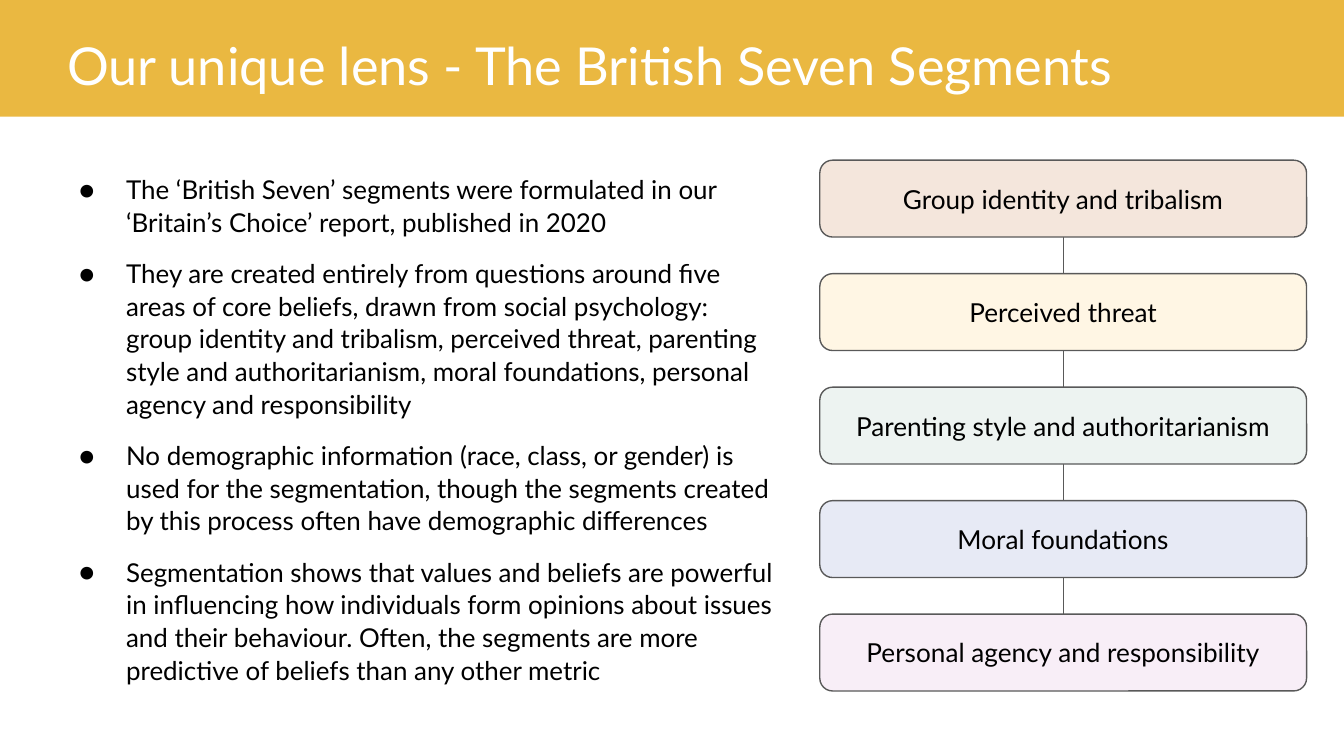
"""Build the British Seven Segments slide: bulleted notes beside a chain of core beliefs."""
from typing import NamedTuple

from lxml.etree import SubElement
from pptx import Presentation
from pptx.dml.color import RGBColor
from pptx.enum.shapes import MSO_CONNECTOR, MSO_SHAPE
from pptx.enum.text import MSO_ANCHOR, PP_ALIGN
from pptx.oxml.ns import qn
from pptx.util import Pt

FONT = "Lato"
BLACK, WHITE, GOLD, GREY = "000000", "FFFFFF", "EAB841", "595959"
SLIDE_WIDTH, SLIDE_HEIGHT = 720, 405
BELIEF_LEFT, BELIEF_TOP, BELIEF_WIDTH, BELIEF_HEIGHT = 439.2, 85.8, 260.8, 41.2
BELIEF_PITCH = 60.8


class Box(NamedTuple):
    left: float
    top: float
    width: float
    height: float


class Belief(NamedTuple):
    label: str
    fill: str


TITLE = "Our unique lens - The British Seven Segments"
POINTS = [
    "The ‘British Seven’ segments were formulated in our ‘Britain’s Choice’ report, "
    "published in 2020",
    "They are created entirely from questions around five areas of core beliefs, drawn "
    "from social psychology: group identity and tribalism, perceived threat, parenting "
    "style and authoritarianism, moral foundations, personal agency and responsibility",
    "No demographic information (race, class, or gender) is used for the segmentation, "
    "though the segments created by this process often have demographic differences",
    "Segmentation shows that values and beliefs are powerful in influencing how "
    "individuals form opinions about issues and their behaviour. Often, the segments "
    "are more predictive of beliefs than any other metric",
]
BELIEFS = [
    Belief("Group identity and tribalism", "F4E6DC"),
    Belief("Perceived threat", "FFF6E4"),
    Belief("Parenting style and authoritarianism", "EDF3F1"),
    Belief("Moral foundations", "E7EAF5"),
    Belief("Personal agency and responsibility", "F8EEF7"),
]


def rgb(code: str) -> RGBColor:
    return RGBColor.from_string(code)


def set_margins(frame, left: float, top: float, right: float, bottom: float) -> None:
    frame.margin_left, frame.margin_top = Pt(left), Pt(top)
    frame.margin_right, frame.margin_bottom = Pt(right), Pt(bottom)
    frame.word_wrap = True


def style_runs(paragraph, size: float, color: str) -> None:
    for run in paragraph.runs:
        run.font.name = FONT
        run.font.size = Pt(size)
        run.font.color.rgb = rgb(color)


def add_panel(slide, preset, box: Box, fill: str, text: str, size: float, color: str,
              align: PP_ALIGN):
    panel = slide.shapes.add_shape(preset, *map(Pt, box))
    panel.shadow.inherit = False
    panel.fill.solid()
    panel.fill.fore_color.rgb = rgb(fill)
    panel.line.fill.background()
    frame = panel.text_frame
    frame.text = text
    frame.vertical_anchor = MSO_ANCHOR.MIDDLE
    set_margins(frame, 7.2, 7.2, 7.2, 7.2)
    frame.paragraphs[0].alignment = align
    style_runs(frame.paragraphs[0], size, color)
    return panel


def set_outline(line) -> None:
    line.color.rgb = rgb(GREY)
    line.width = Pt(0.75)


def add_spine(slide) -> None:
    center = BELIEF_LEFT + BELIEF_WIDTH / 2
    bottom = BELIEF_TOP + BELIEF_PITCH * (len(BELIEFS) - 1) + BELIEF_HEIGHT
    spine = slide.shapes.add_connector(
        MSO_CONNECTOR.STRAIGHT, Pt(center), Pt(BELIEF_TOP), Pt(center), Pt(bottom))
    set_outline(spine.line)
    SubElement(spine._element.spPr, qn("a:effectLst"))


def add_bullet(paragraph) -> None:
    properties = paragraph._p.get_or_add_pPr()
    properties.set("marL", str(Pt(36)))
    properties.set("indent", str(Pt(-25.2)))
    bullet_color = SubElement(properties, qn("a:buClr"))
    SubElement(bullet_color, qn("a:srgbClr"), val=BLACK)
    SubElement(properties, qn("a:buFont"), typeface=FONT)
    SubElement(properties, qn("a:buChar"), char="●")


def add_points(slide, box: Box) -> None:
    frame = slide.shapes.add_textbox(*map(Pt, box)).text_frame
    set_margins(frame, 7.2, 7.2, 7.2, 7.2)
    frame.text = "\n".join(POINTS)
    for index, paragraph in enumerate(frame.paragraphs):
        paragraph.line_spacing = 1.05
        paragraph.space_before = Pt(10 if index else 0)
        style_runs(paragraph, 13.9, BLACK)
        add_bullet(paragraph)


def add_beliefs(slide) -> None:
    for index, belief in enumerate(BELIEFS):
        box = Box(BELIEF_LEFT, BELIEF_TOP + index * BELIEF_PITCH, BELIEF_WIDTH, BELIEF_HEIGHT)
        panel = add_panel(slide, MSO_SHAPE.ROUNDED_RECTANGLE, box, belief.fill,
                          belief.label, 14, BLACK, PP_ALIGN.CENTER)
        set_outline(panel.line)


def main() -> None:
    presentation = Presentation()
    presentation.slide_width, presentation.slide_height = Pt(SLIDE_WIDTH), Pt(SLIDE_HEIGHT)
    slide = presentation.slides.add_slide(presentation.slide_layouts[6])
    add_spine(slide)
    add_points(slide, Box(24.5, 85, 400.3, 310.3))
    banner = add_panel(slide, MSO_SHAPE.RECTANGLE, Box(0, 0, SLIDE_WIDTH, 62.6), GOLD,
                       TITLE, 28, WHITE, PP_ALIGN.LEFT)
    set_margins(banner.text_frame, 36, 14.4, 36, 7.2)
    add_beliefs(slide)
    presentation.save("out.pptx")


if __name__ == "__main__":
    main()
